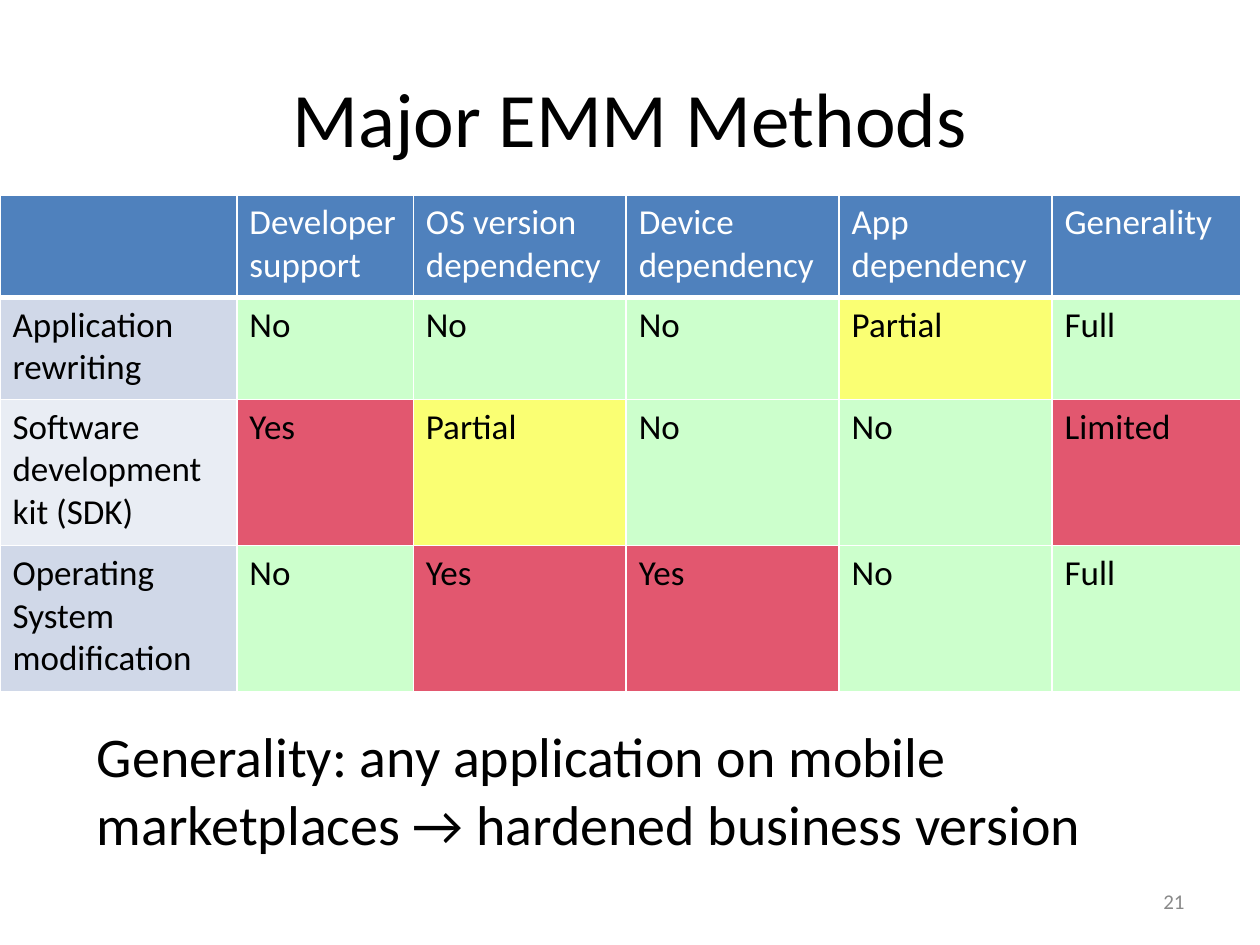
from dataclasses import dataclass

from lxml import etree
from pptx import Presentation
from pptx import util as u
from pptx.dml.color import RGBColor
from pptx.enum import text
from pptx.oxml import ns

# The page is a grid of 100 columns by 75 rows, one unit being a tenth of an inch.
PAGE_COLUMNS, PAGE_ROWS = 100, 75


@dataclass(frozen=True)
class Theme:
    font: str = "Calibri"
    ink: str = "000000"
    paper: str = "FFFFFF"
    muted: str = "898989"
    header: str = "4F81BD"
    bands: tuple[str, str] = ("D0D8E8", "E9EDF4")
    good: str = "CCFFCC"
    medium: str = "FAFF73"
    bad: str = "E2576F"
    title_size: float = 44
    note_size: float = 32
    table_size: float = 20
    number_size: float = 12


THEME = Theme()


@dataclass(frozen=True)
class Box:
    left: float
    top: float
    width: float
    height: float

    def emu(self) -> tuple[int, ...]:
        return tuple(grid(v) for v in (self.left, self.top, self.width, self.height))


@dataclass(frozen=True)
class Label:
    words: str
    box: Box
    size: float
    color: str = THEME.ink
    align: text.PP_ALIGN = text.PP_ALIGN.LEFT
    anchor: text.MSO_ANCHOR = text.MSO_ANCHOR.MIDDLE
    space_before: float = 0


@dataclass(frozen=True)
class Method:
    name: str
    height: float
    ratings: tuple[str, ...]


LABELS = (
    Label("Major EMM Methods", Box(5, 3, 90, 12.5), THEME.title_size,
          align=text.PP_ALIGN.CENTER),
    Label("21", Box(71.7, 69.5, 23.3, 4), THEME.number_size, THEME.muted,
          align=text.PP_ALIGN.RIGHT),
    Label("Generality: any application on mobile marketplaces → hardened business version",
          Box(6.7, 56.8, 89.2, 10.8), THEME.note_size,
          anchor=text.MSO_ANCHOR.TOP, space_before=0.2 * THEME.note_size),
)

TABLE_TOP = 15.5
COLUMN_WIDTHS = (18.8, 14, 16.9, 16.9, 16.9, 15)
HEADER_HEIGHT = 8.1
HEADINGS = ("", "Developer support", "OS version dependency", "Device dependency",
            "App dependency", "Generality")
METHODS = (
    Method("Application rewriting", 8.1, ("No", "No", "No", "Partial", "Full")),
    Method("Software development kit (SDK)", 11.6, ("Yes", "Partial", "No", "No", "Limited")),
    Method("Operating System modification", 11.6, ("No", "Yes", "Yes", "No", "Full")),
)
RATING_FILLS = {"No": THEME.good, "Full": THEME.good, "Partial": THEME.medium,
                "Yes": THEME.bad, "Limited": THEME.bad}
HEADER_EDGES = {"lnL": 1, "lnR": 1, "lnT": 1, "lnB": 3}


def grid(units: float) -> int:
    return u.Inches(units / 10)


def apply(target, values: dict) -> None:
    for name, value in values.items():
        setattr(target, name, value)


def write(para, words: str, size: float, color: str) -> None:
    span = para.add_run()
    span.text = words
    apply(span.font, {"name": THEME.font, "size": u.Pt(size), "bold": False})
    span.font.color.rgb = RGBColor.from_string(color)


def add_label(page, label: Label) -> None:
    frame = page.shapes.add_textbox(*label.box.emu()).text_frame
    apply(frame, {"word_wrap": True, "vertical_anchor": label.anchor})
    para = frame.paragraphs[0]
    apply(para, {"alignment": label.align, "space_before": u.Pt(label.space_before)})
    write(para, label.words, label.size, label.color)


def fill_cell(cell, words: str, fill: str, color: str = THEME.ink) -> None:
    cell.fill.solid()
    cell.fill.fore_color.rgb = RGBColor.from_string(fill)
    if words:
        write(cell.text_frame.paragraphs[0], words, THEME.table_size, color)


def outline_cell(cell, edges: dict[str, float]) -> None:
    """Draw the cell's edges; they must precede the fill in its properties."""
    properties = cell._tc.get_or_add_tcPr()
    for position, (edge, points) in enumerate(edges.items()):
        line = etree.Element(ns.qn(f"a:{edge}"), w=str(u.Pt(points)))
        solid = etree.SubElement(line, ns.qn("a:solidFill"))
        etree.SubElement(solid, ns.qn("a:srgbClr"), val=THEME.paper)
        properties.insert(position, line)


def add_comparison(page) -> None:
    heights = (HEADER_HEIGHT, *(method.height for method in METHODS))
    box = Box(0, TABLE_TOP, sum(COLUMN_WIDTHS), sum(heights))
    table = page.shapes.add_table(len(heights), len(COLUMN_WIDTHS), *box.emu()).table
    for column, width in zip(table.columns, COLUMN_WIDTHS):
        column.width = grid(width)
    for row, height in zip(table.rows, heights):
        row.height = grid(height)

    for column, heading in enumerate(HEADINGS):
        cell = table.cell(0, column)
        fill_cell(cell, heading, THEME.header, THEME.paper)
        outline_cell(cell, HEADER_EDGES)
    for row, method in enumerate(METHODS, start=1):
        fill_cell(table.cell(row, 0), method.name, THEME.bands[(row - 1) % 2])
        for column, rating in enumerate(method.ratings, start=1):
            fill_cell(table.cell(row, column), rating, RATING_FILLS[rating])


def main() -> None:
    deck = Presentation()
    apply(deck, {"slide_width": grid(PAGE_COLUMNS), "slide_height": grid(PAGE_ROWS)})
    page = deck.slides.add_slide(deck.slide_layouts[6])
    add_comparison(page)
    for label in LABELS:
        add_label(page, label)
    deck.save("out.pptx")


if __name__ == "__main__":
    main()
